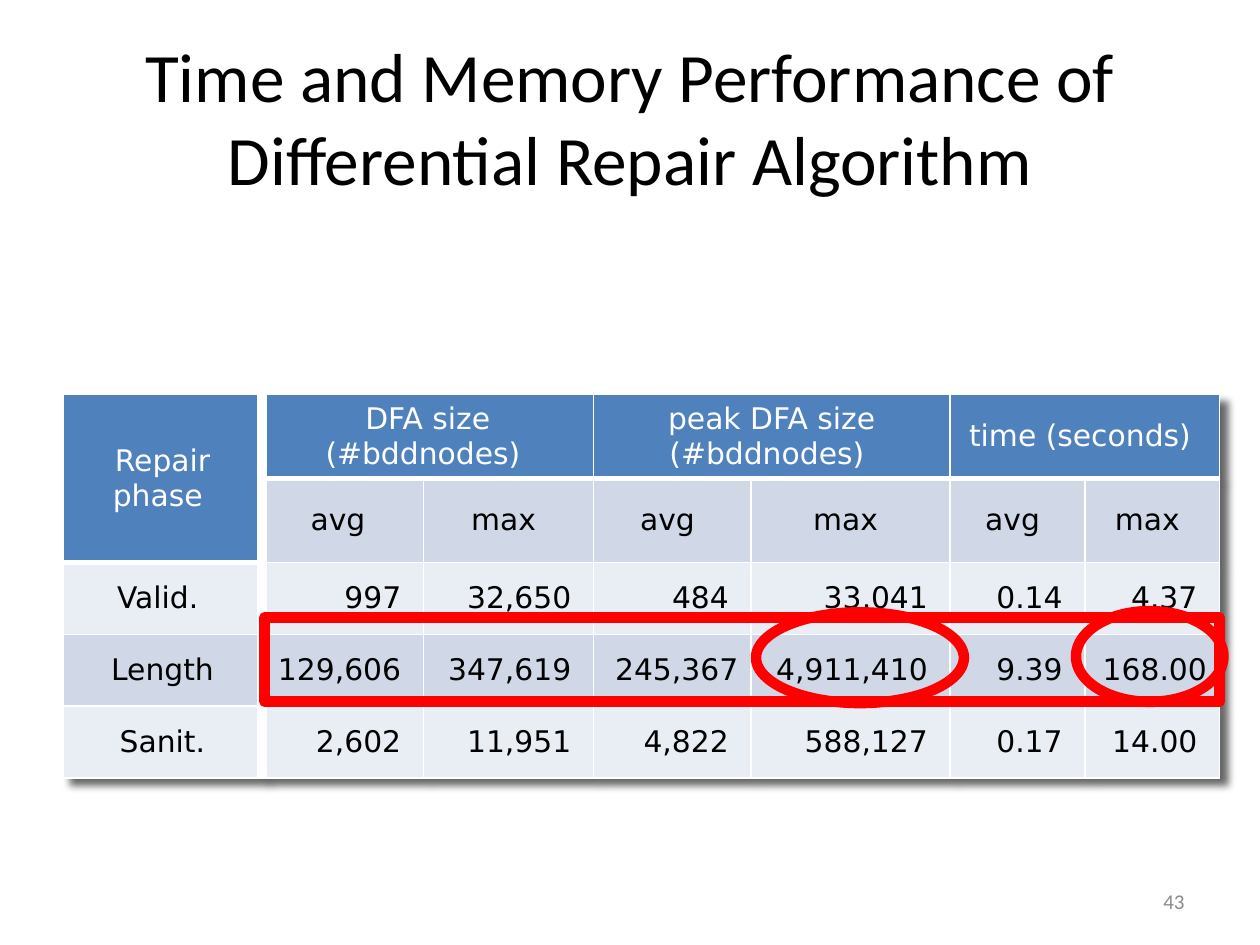
from dataclasses import dataclass

from lxml.etree import SubElement
from pptx import Presentation
from pptx.dml.color import RGBColor
from pptx.enum.shapes import MSO_SHAPE
from pptx.enum.text import MSO_ANCHOR, PP_ALIGN
from pptx.oxml import parse_xml
from pptx.oxml.ns import nsdecls, qn
from pptx.util import Inches, Pt


@dataclass(frozen=True)
class Theme:
    """Colours, fonts and type sizes of the slide."""
    black: str = "000000"
    white: str = "FFFFFF"
    grey: str = "8C8C8C"
    blue: str = "4F81BD"
    dark: str = "D0D8E8"
    light: str = "E9EDF4"
    red: str = "FF0000"
    head: str = "Calibri"
    body: str = "DejaVu Sans"
    title: float = 39.6
    cell: float = 17
    small: float = 12
    ring: float = 6


THEME = Theme()
WIDTHS = [1.58, 1.28, 1.35, 1.25, 1.58, 1.07, 1.07]
HEIGHTS = [0.65, 0.65, 0.57, 0.57, 0.57]
ROWS = [
    ["Repair phase ", "DFA size (#bddnodes) ", "", "peak DFA size (#bddnodes) ", "",
     "time (seconds) ", ""],
    ["", "avg ", "max ", "avg ", "max ", "avg ", "max "],
    ["Valid. ", "997 ", "32,650 ", "484 ", "33,041 ", "0.14 ", "4.37 "],
    ["Length", "129,606 ", "347,619 ", "245,367 ", "4,911,410 ", "9.39 ", "168.00 "],
    ["Sanit.", "2,602 ", "11,951 ", "4,822 ", "588,127 ", "0.17 ", "14.00 "],
]
SHADOW = f"""<a:effectLst {nsdecls("a")}>
  <a:outerShdw blurRad="50800" dist="76200" dir="2700000" algn="tl" rotWithShape="0">
    <a:srgbClr val="000000"><a:alpha val="60000"/></a:srgbClr>
  </a:outerShdw>
</a:effectLst>"""


def paint(frame, text, font, size, color, align):
    """Fill a text frame with one styled paragraph."""
    frame.text = text
    frame.word_wrap = True
    frame.vertical_anchor = MSO_ANCHOR.MIDDLE
    para = frame.paragraphs[0]
    para.alignment = align
    para.font.name = font
    para.font.size = Pt(size)
    para.font.color.rgb = RGBColor.from_string(color)


def add_title(slide, text):
    """Place and style the title."""
    title = slide.shapes.title
    title.left, title.top = Inches(0.5), Inches(0.3)
    title.width, title.height = Inches(9), Inches(1.25)
    paint(title.text_frame, text, THEME.head, THEME.title, THEME.black, PP_ALIGN.CENTER)


def add_number(slide, text):
    """Add the page number at the lower right."""
    box = slide.shapes.add_textbox(Inches(7.17), Inches(6.95), Inches(2.33), Inches(0.4))
    paint(box.text_frame, text, THEME.head, THEME.small, THEME.grey, PP_ALIGN.RIGHT)


def add_edges(cell, row, col):
    """Draw white cell borders, thick beside the first column."""
    widths = {
        "lnL": 6 if col == 1 else 1,
        "lnR": 6 if col == 0 else 1,
        "lnT": 1,
        "lnB": 3 if row == 0 else 1,
    }
    props = cell._tc.get_or_add_tcPr()
    for tag, width in widths.items():
        line = SubElement(props, qn(f"a:{tag}"), w=str(Pt(width)))
        fill = SubElement(line, qn("a:solidFill"))
        SubElement(fill, qn("a:srgbClr"), val=THEME.white)


def style_cell(cell, row, col):
    """Write, align and colour one cell by its place in the grid."""
    head = row == 0
    fill = THEME.blue if head else THEME.dark if row % 2 else THEME.light
    align = PP_ALIGN.RIGHT if row > 1 and col else PP_ALIGN.CENTER
    color = THEME.white if head else THEME.black
    add_edges(cell, row, col)
    cell.fill.solid()
    cell.fill.fore_color.rgb = RGBColor.from_string(fill)
    paint(cell.text_frame, ROWS[row][col], THEME.body, THEME.cell, color, align)
    cell.vertical_anchor = MSO_ANCHOR.MIDDLE


def add_grid(slide):
    """Add the results table with its merged header cells."""
    frame = slide.shapes.add_table(
        len(ROWS), len(WIDTHS), Inches(0.5), Inches(3.13),
        Inches(sum(WIDTHS)), Inches(sum(HEIGHTS)))
    table = frame.table
    table._tbl.tblPr.insert(0, parse_xml(SHADOW))
    for col, width in zip(table.columns, WIDTHS):
        col.width = Inches(width)
    for row, height in zip(table.rows, HEIGHTS):
        row.height = Inches(height)
    table.cell(0, 0).merge(table.cell(1, 0))
    for col in (1, 3, 5):
        table.cell(0, col).merge(table.cell(0, col + 1))
    for row in range(len(ROWS)):
        for col in range(len(WIDTHS)):
            cell = table.cell(row, col)
            if not cell.is_spanned:
                style_cell(cell, row, col)


def add_ring(slide, kind, *place):
    """Add a hollow red outline around a result."""
    ring = slide.shapes.add_shape(kind, *map(Inches, place))
    ring.shadow.inherit = False
    ring.fill.background()
    ring.line.color.rgb = RGBColor.from_string(THEME.red)
    ring.line.width = Pt(THEME.ring)


def main():
    """Build the slide and save it."""
    deck = Presentation()
    deck.slide_width, deck.slide_height = Inches(10), Inches(7.5)
    slide = deck.slides.add_slide(deck.slide_layouts[5])
    add_title(slide, "Time and Memory Performance of Differential Repair Algorithm")
    add_number(slide, "43")
    add_grid(slide)
    add_ring(slide, MSO_SHAPE.RECTANGLE, 2.1, 4.9, 7.58, 0.67)
    add_ring(slide, MSO_SHAPE.OVAL, 8.54, 4.85, 1.17, 0.72)
    add_ring(slide, MSO_SHAPE.OVAL, 6, 4.86, 1.65, 0.72)
    deck.save("out.pptx")


if __name__ == "__main__":
    main()
